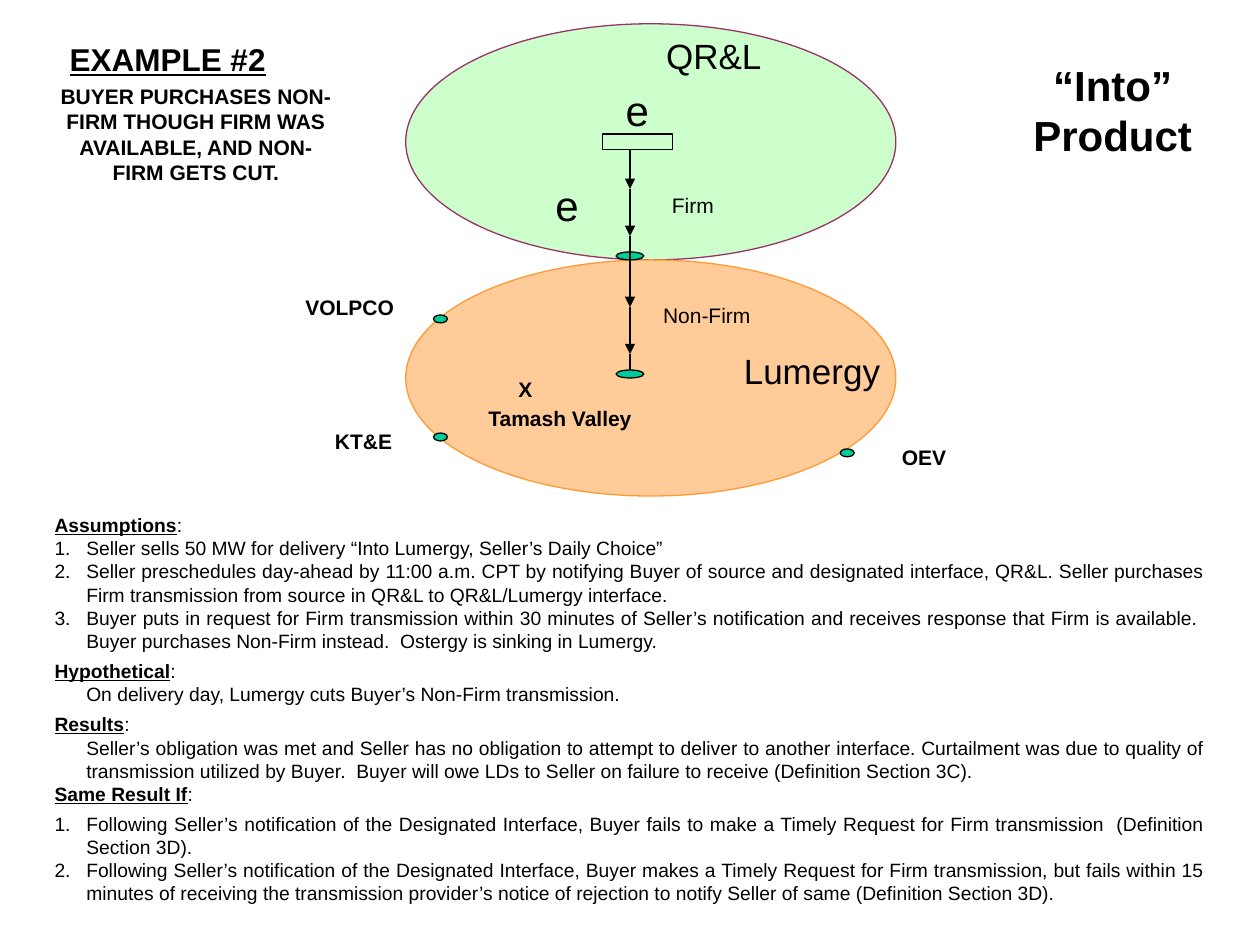
import pptx
import pptx.util
import pptx.dml.color
import pptx.enum.shapes
import pptx.enum.text
import pptx.oxml.ns
import lxml.etree

Cm = pptx.util.Cm
Pt = pptx.util.Pt
kinds = pptx.enum.shapes.MSO_SHAPE
align = pptx.enum.text.PP_ALIGN
anchor = pptx.enum.text.MSO_ANCHOR
qn = pptx.oxml.ns.qn


def color(target, code):
    target.rgb = pptx.dml.color.RGBColor.from_string(code)


def write(par, text, size, **more):
    run = par.add_run()
    run.text = text
    looks = {"name": "Arial", "size": Pt(size), "bold": False, "underline": False, **more}
    for key, val in looks.items():
        setattr(run.font, key, val)
    color(run.font.color, "000000")


deck = pptx.Presentation()
deck.slide_width, deck.slide_height = Cm(25.4), Cm(19.05)
slide = deck.slides.add_slide(deck.slide_layouts[5])
shapes = slide.shapes

title = shapes.title
place = {"left": Cm(19.89), "top": Cm(1.07), "width": Cm(5.08), "height": Cm(2.29)}
for key, val in place.items():
    setattr(title, key, val)
frame = title.text_frame
setup = {"word_wrap": True, "vertical_anchor": anchor.TOP,
         "auto_size": pptx.enum.text.MSO_AUTO_SIZE.NONE}
for key, val in setup.items():
    setattr(frame, key, val)
frame.paragraphs[0].alignment = align.CENTER
write(frame.paragraphs[0], "“Into” Product", 24, bold=True)

node = kinds.FLOWCHART_CONNECTOR
forms = [
    (kinds.OVAL, 8.18, 0.48, 9.88, 4.76, "CCFFCC", "993366"),
    (kinds.OVAL, 8.18, 5.24, 9.88, 4.76, "FFCC99", "FF9933"),
    (kinds.RECTANGLE, 12.14, 2.7, 1.42, 0.31, None, "000000"),
    (node, 8.74, 6.35, 0.28, 0.16, "00CC99", "000000"),
    (node, 8.74, 8.73, 0.28, 0.16, "00CC99", "000000"),
    (node, 16.94, 9.05, 0.28, 0.16, "00CC99", "000000"),
    (node, 12.42, 5.08, 0.56, 0.16, "00CC99", "000000"),
    (node, 12.42, 7.46, 0.56, 0.16, "00CC99", "000000"),
]
for kind, left, top, width, height, fill, edge in forms:
    shape = shapes.add_shape(kind, Cm(left), Cm(top), Cm(width), Cm(height))
    shape.shadow.inherit = False
    if fill:
        shape.fill.solid()
        color(shape.fill.fore_color, fill)
    else:
        shape.fill.background()
    color(shape.line.color, edge)
    shape.line.width = Pt(0.75)

stops = [3.02, 3.81, 4.76, 6.19, 7.14, 7.46]
for start, end in zip(stops, stops[1:]):
    line = shapes.add_connector(pptx.enum.shapes.MSO_CONNECTOR.STRAIGHT,
                                Cm(12.7), Cm(start), Cm(12.7), Cm(end))
    color(line.line.color, "000000")
    line.line.width = Pt(0.75)
    lxml.etree.SubElement(line._element.spPr, qn("a:effectLst"))
    if end != stops[-1]:
        lxml.etree.SubElement(line.line._get_or_add_ln(), qn("a:tailEnd"), type="triangle")

labels = [
    ("EXAMPLE #2", 1.12, 0.79, 4.52, 0.79, 18, {"bold": True, "underline": True}),
    ("QR&L", 13.26, 0.79, 2.26, 0.64, 20, {}),
    ("e", 12.14, 2.06, 1.42, 0.32, 24, {}),
    ("e", 10.72, 3.97, 1.42, 0.32, 24, {}),
    ("Firm", 13.26, 3.97, 1.42, 0.32, 12, {}),
    ("Non-Firm", 13.14, 6.19, 2.22, 0.32, 12, {}),
    ("Lumergy", 14.77, 7.14, 3.2, 0.64, 20, {}),
    ("OEV", 17.5, 8.89, 2.26, 0.64, 12, {"bold": True}),
    ("Tamash Valley", 9.54, 8.26, 3.5, 0.32, 12, {"bold": True}),
    ("VOLPCO", 5.92, 5.87, 2.26, 0.64, 12, {"bold": True}),
    ("X", 9.88, 7.69, 1.42, 0.32, 12, {"bold": True}),
    ("KT&E", 6.2, 8.57, 2.26, 0.64, 12, {"bold": True}),
    ("BUYER PURCHASES NON-FIRM THOUGH FIRM WAS AVAILABLE, AND NON-FIRM GETS CUT.",
     1.1, 1.91, 5.7, 1.59, 12, {"bold": True}),
]
setup = {"word_wrap": True, "vertical_anchor": anchor.MIDDLE,
         "margin_left": 0, "margin_right": 0}
for text, left, top, width, height, size, looks in labels:
    frame = shapes.add_textbox(Cm(left), Cm(top), Cm(width), Cm(height)).text_frame
    for key, val in setup.items():
        setattr(frame, key, val)
    frame.paragraphs[0].alignment = align.CENTER
    write(frame.paragraphs[0], text, size, **looks)

parts = [
    ("Assumptions", {}, [
        "1.\tSeller sells 50 MW for delivery “Into Lumergy, Seller’s Daily Choice”",
        "2.\tSeller preschedules day-ahead by 11:00 a.m. CPT by notifying Buyer of source and "
        "designated interface, QR&L. Seller purchases Firm transmission from source in QR&L "
        "to QR&L/Lumergy interface.",
        "3.\tBuyer puts in request for Firm transmission within 30 minutes of Seller’s "
        "notification and receives response that Firm is available.  Buyer purchases "
        "Non-Firm instead.  Ostergy is sinking in Lumergy."]),
    ("Hypothetical", {"space_before": Pt(4.1)}, [
        "On delivery day, Lumergy cuts Buyer’s Non-Firm transmission."]),
    ("Results", {"space_before": Pt(4.1)}, [
        "Seller’s obligation was met and Seller has no obligation to attempt to deliver to "
        "another interface. Curtailment was due to quality of transmission utilized by "
        "Buyer.  Buyer will owe LDs to Seller on failure to receive (Definition Section 3C)."]),
    ("Same Result If", {"space_after": Pt(4.1)}, [
        "1.\tFollowing Seller’s notification of the Designated Interface, Buyer fails to make "
        "a Timely Request for Firm transmission  (Definition Section 3D).",
        "2.\tFollowing Seller’s notification of the Designated Interface, Buyer makes a Timely "
        "Request for Firm transmission, but fails within 15 minutes of receiving the "
        "transmission provider’s notice of rejection to notify Seller of same "
        "(Definition Section 3D)."]),
]
frame = shapes.add_textbox(Cm(0.85), Cm(10), Cm(23.7), Cm(8.59)).text_frame
frame.word_wrap = True
frame.vertical_anchor = anchor.MIDDLE
par = frame.paragraphs[0]
for head, gaps, items in parts:
    if par.runs:
        par = frame.add_paragraph()
    for key, val in {"alignment": align.JUSTIFY, **gaps}.items():
        setattr(par, key, val)
    write(par, head, 11, bold=True, underline=True)
    write(par, ":", 11)
    for item in items:
        par = frame.add_paragraph()
        par.alignment = align.JUSTIFY
        props = par._p.get_or_add_pPr()
        props.set("marL", str(Cm(0.64)))
        props.set("indent", str(Cm(-0.64 if "\t" in item else 0)))
        write(par, item, 11)

deck.save("out.pptx")
